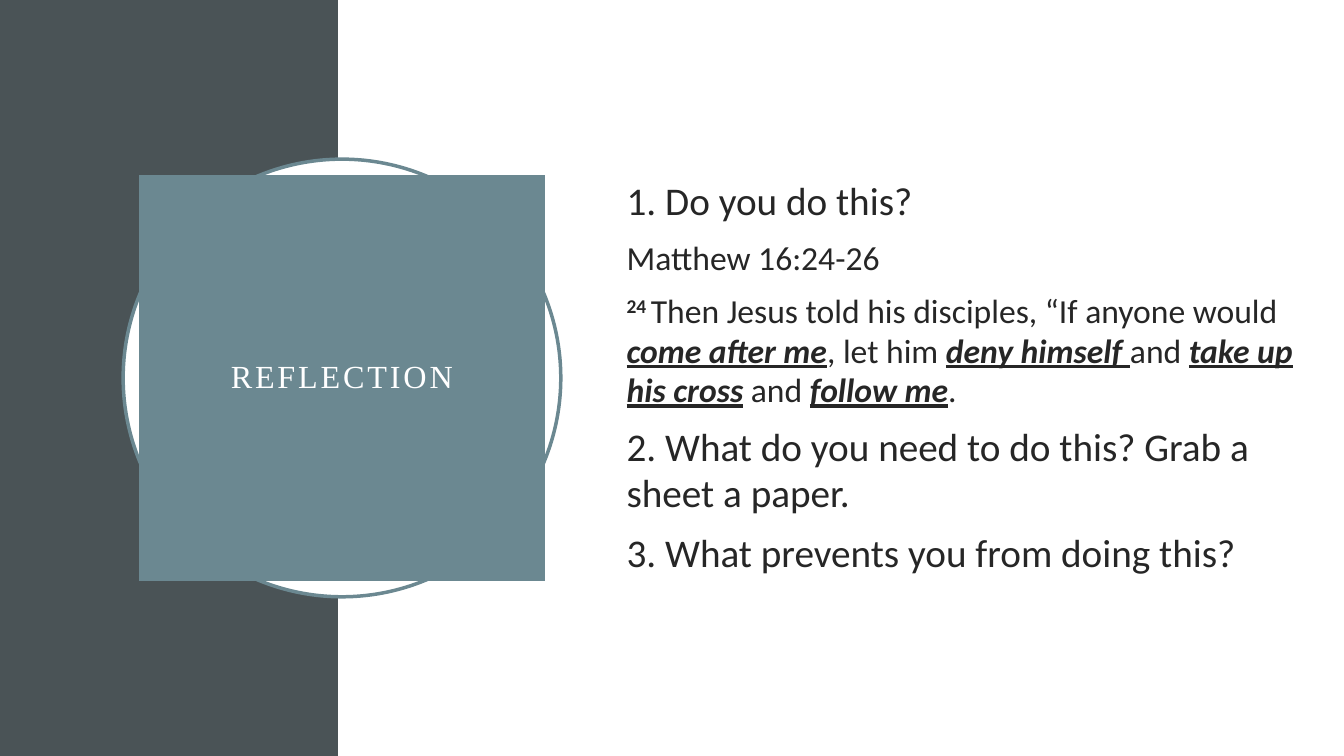
import dataclasses

import pptx
import pptx.dml.color
import pptx.enum.shapes
import pptx.enum.text
import pptx.util

Pt = pptx.util.Pt
SHAPES = pptx.enum.shapes.MSO_SHAPE
MIDDLE = pptx.enum.text.MSO_ANCHOR.MIDDLE
ALIGN = pptx.enum.text.PP_ALIGN


@dataclasses.dataclass(frozen=True)
class Theme:
    """Hold the colours, fonts and type sizes of the deck."""
    dark: str = "4A5356"
    accent: str = "6B8891"
    paper: str = "FFFFFF"
    ink: str = "262626"
    title_font: str = "Times New Roman"
    body_font: str = "Calibri"
    title_size: float = 23
    question_size: float = 28
    verse_size: float = 24


THEME = Theme()
STRONG = {"bold": True, "italic": True, "underline": True}
BODY = [
    (THEME.question_size, [("1. Do you do this?", {})]),
    (THEME.verse_size, [("Matthew 16:24-26", {})]),
    (THEME.verse_size, [
        ("24\u00a0", {"bold": True, "baseline": 30000}),
        ("Then Jesus told his disciples, “If anyone would ", {}),
        ("come after me", STRONG),
        (", let him ", {}),
        ("deny himself ", STRONG),
        ("and ", {}),
        ("take up his cross", STRONG),
        (" and ", {}),
        ("follow me", STRONG),
        (".", {}),
    ]),
    (THEME.question_size,
     [("2. What do you need to do this? Grab a sheet a paper.", {})]),
    (THEME.question_size, [("3. What prevents you from doing this?", {})]),
]


def colour(value):
    """Turn a hex string into a colour."""
    return pptx.dml.color.RGBColor.from_string(value)


def apply(target, values):
    """Set each named attribute on the target."""
    for name, value in values.items():
        setattr(target, name, value)


def place(shape, box):
    """Move a shape to a box given in points."""
    apply(shape, dict(zip(("left", "top", "width", "height"), map(Pt, box))))


def add_span(para, text, size, font, ink, style):
    """Add one formatted run of text."""
    span = para.add_run()
    span.text = text
    span.font.color.rgb = colour(ink)
    values = {"size": Pt(size), "name": font, **style}
    baseline = values.pop("baseline", None)
    apply(span.font, values)
    if baseline:
        span.font._element.set("baseline", str(baseline))
    return span


def add_panel(page, kind, box, fill, outline=None):
    """Draw a filled shape, outlined when a line colour is given."""
    panel = page.shapes.add_shape(kind, *map(Pt, box))
    panel.shadow.inherit = False
    panel.fill.solid()
    panel.fill.fore_color.rgb = colour(fill)
    if outline:
        panel.line.color.rgb = colour(outline)
        panel.line.width = Pt(2.5)
    else:
        panel.line.fill.background()


def add_badge(page, box, text):
    """Draw the ring and centre the title block inside it."""
    left, top, side, _ = box
    add_panel(page, SHAPES.OVAL, box, THEME.paper, THEME.accent)
    inset = 11.3
    title = page.shapes.title
    place(title, (left + inset, top + inset, side - 2 * inset, side - 2 * inset))
    title.element.getparent().append(title.element)
    title.fill.solid()
    title.fill.fore_color.rgb = colour(THEME.accent)
    frame = title.text_frame
    margin = Pt(14.4)
    apply(frame, {"word_wrap": True, "vertical_anchor": MIDDLE,
                  "auto_size": pptx.enum.text.MSO_AUTO_SIZE.NONE,
                  "margin_left": margin, "margin_right": margin,
                  "margin_top": margin, "margin_bottom": margin})
    para = frame.paragraphs[0]
    apply(para, {"alignment": ALIGN.CENTER, "line_spacing": 0.9})
    span = add_span(para, text, THEME.title_size, THEME.title_font, THEME.paper, {})
    span.font._element.set("spc", "200")


def add_questions(page, box, content):
    """Write the questions and the verse in the box."""
    frame = page.shapes.add_textbox(*map(Pt, box)).text_frame
    apply(frame, {"word_wrap": True, "vertical_anchor": MIDDLE})
    for index, (size, spans) in enumerate(content):
        para = frame.add_paragraph() if index else frame.paragraphs[0]
        apply(para, {"alignment": ALIGN.LEFT, "space_before": Pt(10),
                     "line_spacing": 0.98})
        for text, style in spans:
            add_span(para, text, size, THEME.body_font, THEME.ink, style)


def build_reflection(deck):
    """Lay out the reflection slide."""
    page = deck.slides.add_slide(deck.slide_layouts[5])
    width, height, split = 960, 540, 241.6
    add_panel(page, SHAPES.RECTANGLE, (0, 0, split, height), THEME.dark)
    add_panel(page, SHAPES.RECTANGLE, (split, 0, width - split, height), THEME.paper)
    add_badge(page, (88, 113.7, 312.6, 312.6), "REFLECTION")
    add_questions(page, (440.5, 110.2, 498.2, 319), BODY)


def main():
    """Build and save the deck."""
    deck = pptx.Presentation()
    apply(deck, {"slide_width": Pt(960), "slide_height": Pt(540)})
    build_reflection(deck)
    deck.save("out.pptx")


if __name__ == "__main__":
    main()
